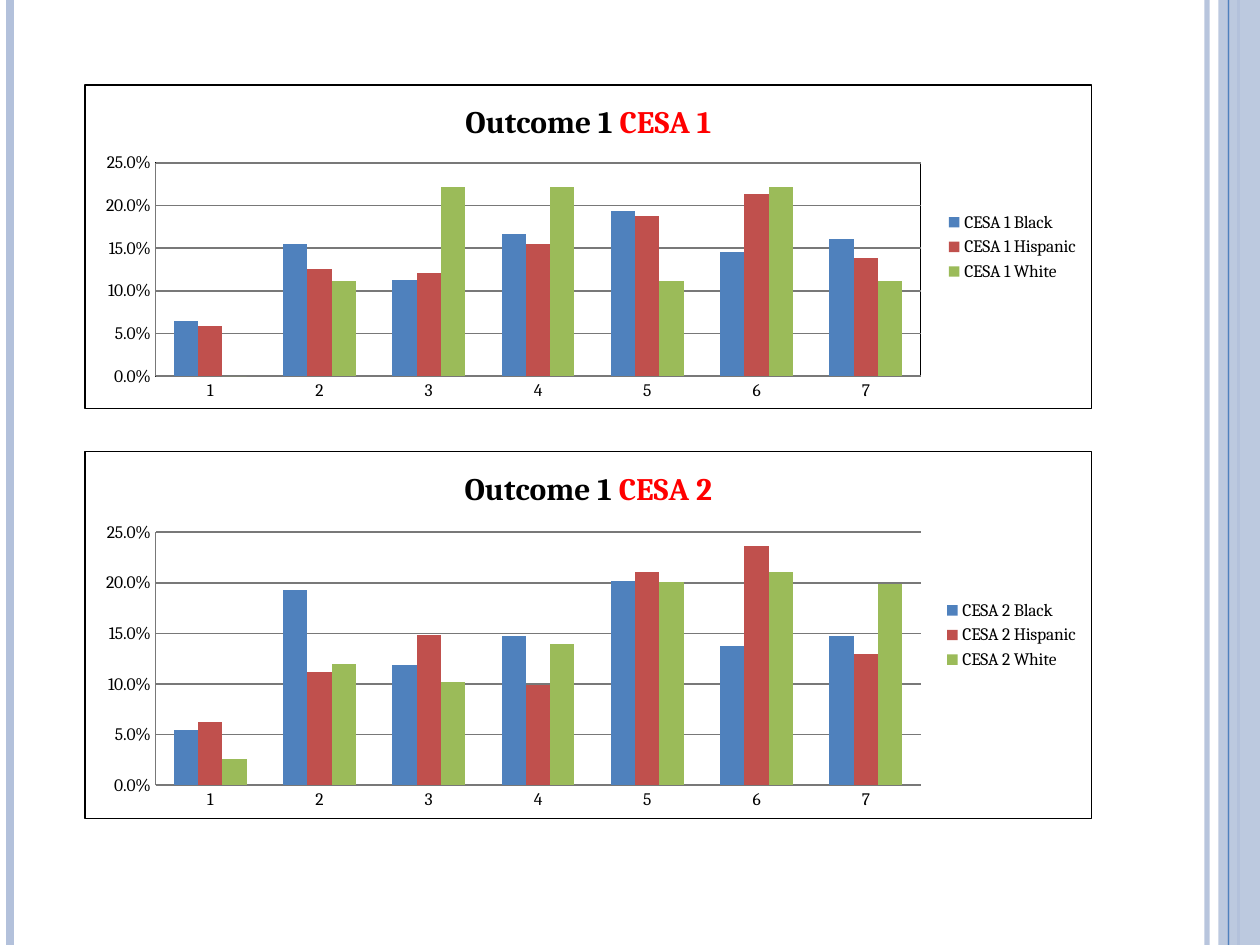
from lxml import etree
from pptx import Presentation
from pptx.chart.data import CategoryChartData
from pptx.dml.color import RGBColor
from pptx.enum.chart import XL_CHART_TYPE as ChartType, XL_LEGEND_POSITION as LegendPosition
from pptx.enum.chart import XL_TICK_MARK as TickMark
from pptx.enum.shapes import MSO_CONNECTOR as Connector, MSO_SHAPE as Shape
from pptx.oxml import parse_xml
from pptx.oxml.ns import nsdecls, qn
from pptx.util import Inches, Pt

CATEGORIES = [str(number) for number in range(1, 8)]
GROUPS = {"Black": "4F81BD", "Hispanic": "C0504D", "White": "9BBB59"}
CESA_1 = [
    (0.065, 0.155, 0.113, 0.167, 0.194, 0.145, 0.161),
    (0.059, 0.126, 0.121, 0.155, 0.187, 0.213, 0.139),
    (0, 0.111, 0.222, 0.222, 0.111, 0.222, 0.111),
]
CESA_2 = [
    (0.055, 0.193, 0.119, 0.147, 0.202, 0.138, 0.147),
    (0.062, 0.112, 0.149, 0.099, 0.211, 0.236, 0.13),
    (0.026, 0.12, 0.102, 0.14, 0.201, 0.211, 0.199),
]


def rgb(value):
    return RGBColor.from_string(value)


def set_format(target, values):
    for name, value in values.items():
        setattr(target, name, value)


def set_alpha(element, percent):
    color = next(element.iter(qn("a:srgbClr")))
    etree.SubElement(color, qn("a:alpha"), val=str(percent * 1000))


def outline(color, width):
    return parse_xml(
        f'<c:spPr {nsdecls("c", "a")}><a:noFill/><a:ln w="{Pt(width)}"><a:solidFill>'
        f'<a:srgbClr val="{color}"/></a:solidFill></a:ln></c:spPr>'
    )


def inner_layout(left, top, width, height):
    places = "".join(
        f'<c:{name} val="{value}"/>'
        for name, value in zip("xywh", (left, top, width, height))
    )
    return parse_xml(
        f'<c:layout {nsdecls("c")}><c:manualLayout><c:layoutTarget val="inner"/>'
        f'<c:xMode val="edge"/><c:yMode val="edge"/>{places}</c:manualLayout></c:layout>'
    )


class SlideBuilder:
    font = "Cambria"
    black = "000000"
    red = "FF0000"
    grid = "787878"

    def __init__(self, slide):
        self.slide = slide

    def stripe(self, left, color, width, alpha=100):
        line = self.slide.shapes.add_connector(
            Connector.STRAIGHT, Inches(left), Inches(0), Inches(left), Inches(7.5)
        )
        line.line.color.rgb = rgb(color)
        line.line.width = Pt(width)
        properties = line._element.spPr
        etree.SubElement(properties, qn("a:effectLst"))
        if alpha < 100:
            set_alpha(properties, alpha)

    def band(self, left, width, color, alpha):
        shape = self.slide.shapes.add_shape(
            Shape.RECTANGLE, Inches(left), Inches(0), Inches(width), Inches(7.5)
        )
        shape.shadow.inherit = False
        shape.fill.solid()
        shape.fill.fore_color.rgb = rgb(color)
        shape.line.fill.background()
        set_alpha(shape._element.spPr, alpha)

    def title(self, chart, runs):
        paragraph = chart.chart_title.text_frame.paragraphs[0]
        for text, color in runs:
            run = paragraph.add_run()
            run.text = text
            set_format(run.font, {"name": self.font, "size": Pt(18), "bold": True})
            run.font.color.rgb = rgb(color)
        chart.chart_title.include_in_layout = False

    def axes(self, chart):
        for axis in (chart.category_axis, chart.value_axis):
            set_format(axis, {
                "major_tick_mark": TickMark.NONE,
                "minor_tick_mark": TickMark.NONE,
            })
            axis.format.line.color.rgb = rgb(self.grid)
            axis.format.line.width = Pt(0.75)
        value_axis = chart.value_axis
        set_format(value_axis, {
            "minimum_scale": 0, "maximum_scale": 0.25, "major_unit": 0.05,
            "has_major_gridlines": True,
        })
        set_format(value_axis.tick_labels, {
            "number_format": "0.0%", "number_format_is_linked": False,
        })
        gridline = value_axis.major_gridlines.format.line
        gridline.color.rgb = rgb(self.grid)
        gridline.width = Pt(1)

    def column_chart(self, name, top, height, values, plot_place, framed=False):
        data = CategoryChartData(number_format="0.0%")
        data.categories = CATEGORIES
        for group, numbers in zip(GROUPS, values):
            data.add_series(f"{name} {group}", numbers)
        chart = self.slide.shapes.add_chart(
            ChartType.COLUMN_CLUSTERED, Inches(0.67), Inches(top),
            Inches(8), Inches(height), data
        ).chart
        set_format(chart.font, {"name": self.font, "size": Pt(10)})
        chart.font.color.rgb = rgb(self.black)
        set_format(chart, {"has_title": True, "has_legend": True})
        self.title(chart, [("Outcome 1 ", self.black), (name, self.red)])
        set_format(chart.legend, {
            "position": LegendPosition.RIGHT, "include_in_layout": False,
        })
        self.axes(chart)
        plot = chart.plots[0]
        set_format(plot, {"gap_width": 150, "overlap": 0, "vary_by_categories": False})
        for series, color in zip(plot.series, GROUPS.values()):
            series.format.fill.solid()
            series.format.fill.fore_color.rgb = rgb(color)
        chart_element = chart._chartSpace.find(qn("c:chart"))
        chart_element.addnext(outline(self.black, 0.75))
        plot_area = chart_element.find(qn("c:plotArea"))
        for layout in plot_area.findall(qn("c:layout")):
            plot_area.remove(layout)
        plot_area.insert(0, inner_layout(*plot_place))
        if framed:
            plot_area.append(outline(self.black, 0.75))


def main():
    presentation = Presentation()
    set_format(presentation, {"slide_width": Inches(10), "slide_height": Inches(7.5)})
    builder = SlideBuilder(presentation.slides.add_slide(presentation.slide_layouts[6]))
    builder.stripe(9.58, "B3C1DB", 3, alpha=93)
    builder.stripe(0.08, "B3C1DB", 4.5)
    builder.stripe(9.75, "4F81BD", 1.5)
    builder.band(9.67, 0.33, "B3C1DB", alpha=87)
    builder.stripe(9.83, "B3C1DB", 1.5)
    builder.stripe(9.75, "4F81BD", 0.75)
    builder.column_chart("CESA 1", 0.67, 2.58, CESA_1, (0.07, 0.24, 0.76, 0.66), framed=True)
    builder.column_chart("CESA 2", 3.58, 2.92, CESA_2, (0.07, 0.22, 0.76, 0.69))
    presentation.save("out.pptx")


if __name__ == "__main__":
    main()
